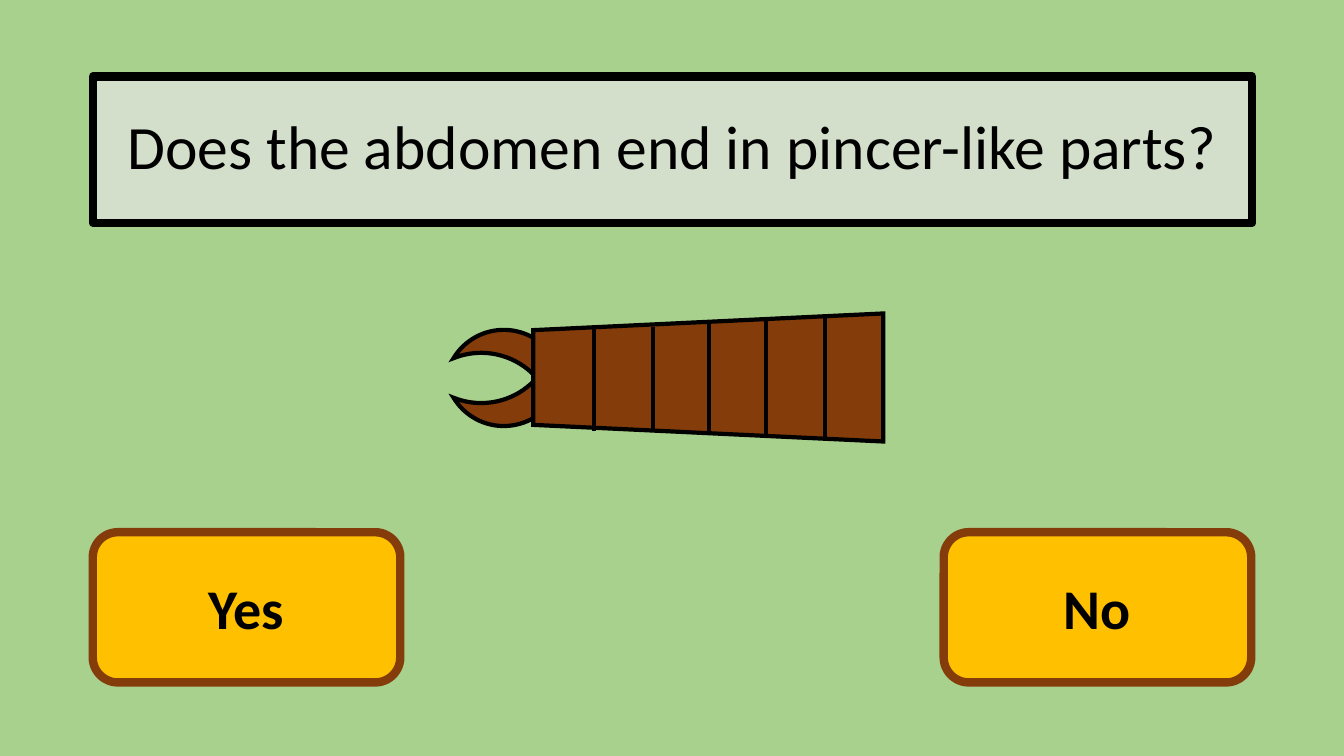
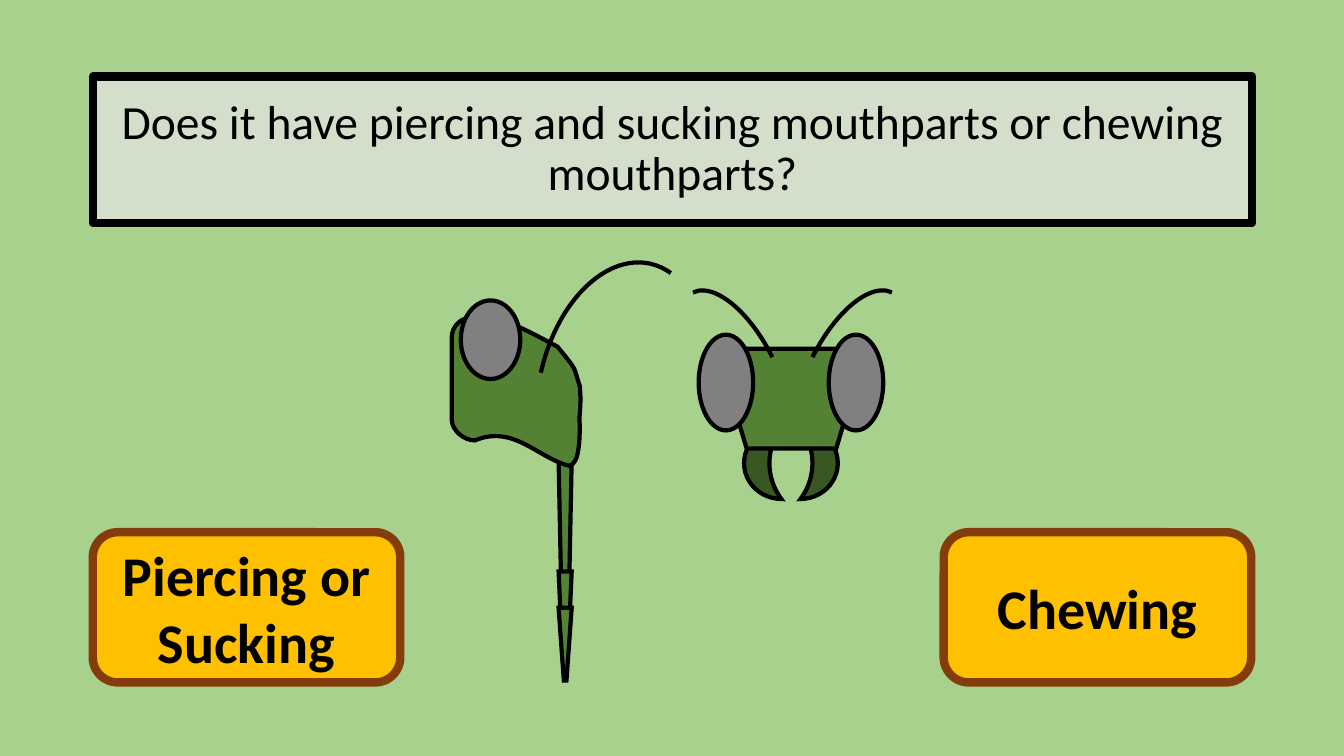
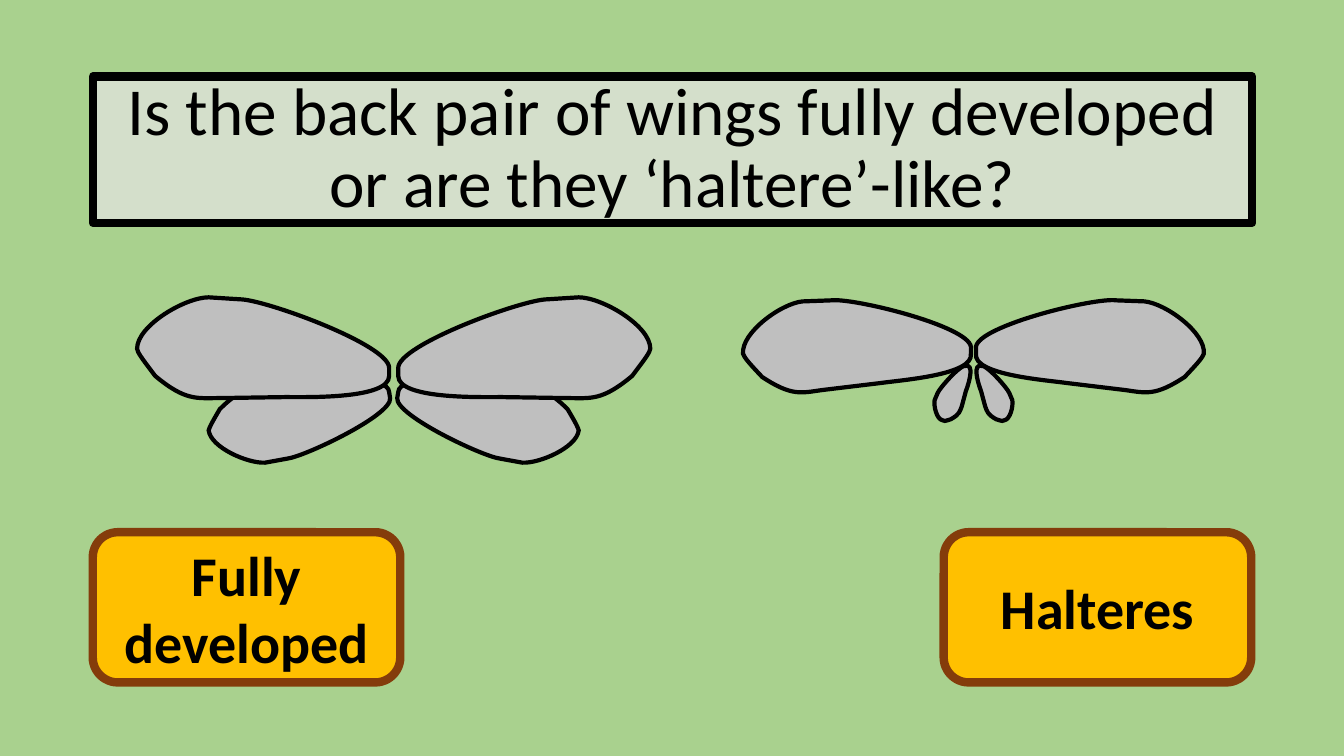
import math
from pptx import Presentation
from pptx import util as u
from pptx.dml.color import RGBColor
from pptx.enum import shapes, text
from pptx.oxml.ns import qn
from lxml import etree

I = u.Inches
S = shapes.MSO_SHAPE


class Theme:
    font = "Calibri"
    page, panel, black = "A9D18E", "E7E6E6", "000000"
    gold, brown = "FFC000", "843C0B"
    green, dark, eye, wing = "548235", "385723", "808080", "BFBFBF"
    frame, ink = 6, 3    # line widths
    label = 40           # button text


# ---- shared helpers ----
def sub(parent, tag, **attrs):
    return etree.SubElement(parent, qn(tag), attrs)


def stroke(shape, color, width):
    shape.line.color.rgb = RGBColor.from_string(color)
    shape.line.width = u.Pt(width)


def paint(shape, fill=None, line=Theme.black, width=Theme.ink, join="miter"):
    if fill:
        shape.fill.solid()
        shape.fill.fore_color.rgb = RGBColor.from_string(fill)
    else:
        shape.fill.background()
    stroke(shape, line, width)
    limit = {"lim": "800000"} if join == "miter" else {}
    sub(shape.line._get_or_add_ln(), "a:" + join, **limit)
    shape.shadow.inherit = False


def write(shape, words, size, bold=False, space=None):
    frame = shape.text_frame
    frame.word_wrap = True
    frame.auto_size = text.MSO_AUTO_SIZE.NONE
    frame.vertical_anchor = text.MSO_ANCHOR.MIDDLE
    para = frame.paragraphs[0]
    para.alignment = text.PP_ALIGN.CENTER
    para.line_spacing = space
    run = para.add_run()
    run.text = words
    run.font.name, run.font.size, run.font.bold = Theme.font, u.Pt(size), bold
    run.font.color.rgb = RGBColor.from_string(Theme.black)


def draw(canvas, kind, org, box, fill=None, turn=0, flip=None, adj=None, **look):
    """Add a preset shape; box is left, top, width, height from org."""
    x, y, w, h = box
    shape = canvas.shapes.add_shape(kind, I(org[0] + x), I(org[1] + y), I(w), I(h))
    shape.rotation = turn
    if flip:
        shape._element.spPr.xfrm.set("flip" + flip, "1")
    if adj is not None:
        shape.adjustments[0] = adj
    paint(shape, fill, **look)
    return shape


def rule(canvas, org, x, top, end):
    """Add an upright line."""
    x = I(org[0] + x)
    line = canvas.shapes.add_connector(
        shapes.MSO_CONNECTOR.STRAIGHT, x, I(org[1] + top), x, I(org[1] + end))
    stroke(line, Theme.black, Theme.ink)
    sub(line._element.spPr, "a:effectLst")


def spin(x, y, turn):
    a = math.radians(turn)
    return x * math.cos(a) - y * math.sin(a), x * math.sin(a) + y * math.cos(a)


def trace(canvas, org, segs, fill, side=1, turn=0):
    """Closed outline: pairs are corners, sixes are curves; side -1 mirrors.

    The points show the outline as it lies once turned."""
    turn *= side
    flat = [spin(side * x, y, -turn)
            for seg in segs for x, y in zip(seg[::2], seg[1::2])]
    # middle of the unturned box, and where it lies once turned
    mid = [(min(axis) + max(axis)) / 2 for axis in zip(*flat)]
    goal = spin(*mid, turn)
    dx, dy = (org[k] + goal[k] - mid[k] for k in (0, 1))
    pts = [(I(x + dx), I(y + dy)) for x, y in flat]
    pen = canvas.shapes.build_freeform(*pts[0], scale=1.0)
    pen.add_line_segments(pts[1:], close=True)
    shape = pen.convert_to_shape()
    shape.rotation = turn % 360
    # join three steps into each curve
    steps = iter(list(shape._element.iter(qn("a:lnTo"))))
    for seg in segs[1:]:
        first = next(steps)
        if len(seg) == 6:
            first.tag = qn("a:cubicBezTo")
            for step in (next(steps), next(steps)):
                first.append(step[0])
                step.getparent().remove(step)
    paint(shape, fill)


# ---- question slide: title panel and two answers ----
def ask(prs, words, size, answers):
    slide = prs.slides.add_slide(prs.slide_layouts[5])
    title = slide.shapes.title
    title.left, title.top, title.width, title.height = map(I, (0.92, 0.76, 11.5, 1.45))
    props = title._element.spPr
    sub(sub(props, "a:prstGeom", prst="roundRect"), "a:avLst")
    paint(title, Theme.panel, width=Theme.frame, join="round")
    sub(props.find(qn("a:solidFill"))[0], "a:alpha", val="70000")
    write(title, words, size, space=0.9)
    for left, answer in zip((0.92, 9.36), answers):
        button = draw(slide, S.ROUNDED_RECTANGLE, (left, 5.28), (0, 0, 3.05, 1.49),
                      Theme.gold, line=Theme.brown, width=Theme.frame)
        write(button, answer, Theme.label, bold=True)
    return slide


# ---- drawings, each one group ----
def abdomen(slide, org):
    group = slide.shapes.add_group_shape()
    # pincers
    for top, turn, flip in ((0.02, 120.9, None), (0.31, 239.1, "V")):
        draw(group, S.MOON, org, (0.36, top, 0.58, 1.17), Theme.brown, turn, flip)
    # body and its rings
    draw(group, S.TRAPEZOID, org, (1.89, -0.99, 1.27, 3.47), Theme.brown, 270, adj=0.13)
    for ring in ((2.53, 0.2, 1.3), (1.98, 0.24, 1.26), (1.39, 0.25, 1.28),
                 (3.1, 0.17, 1.32), (3.68, 0.13, 1.34)):
        rule(group, org, *ring)


HEAD = [(0.08, 0.45), (0.08, 0.34, 0.17, 0.25, 0.28, 0.25),
        (0.55, 0.25, 0.61, 0.26, 1.13, 0.54), (1.34, 0.8, 1.28, 0.72, 1.35, 0.93),
        (1.37, 1.15, 1.34, 1.18, 1.35, 1.32), (1.35, 1.43, 1.35, 1.72, 1.24, 1.72),
        (0.93, 1.64, 0.69, 1.31, 0.31, 1.47), (0.2, 1.47, 0.08, 1.37, 0.08, 1.26),
        (0.08, 0.45)]


def sucker(slide, org):
    group = slide.shapes.add_group_shape()
    # beak
    for top, high, adj in ((1.66, 1.61, 0.25), (2.77, 0.72, 0.25), (3.13, 0.72, 0.4)):
        draw(group, S.TRAPEZOID, org, (1.14, top, 0.13, high), Theme.green, 180, adj=adj)
    # head, eye and feeler
    trace(group, org, HEAD, Theme.green)
    draw(group, S.OVAL, org, (0.17, 0.08, 0.59, 0.78), Theme.eye)
    feeler = draw(group, S.ARC, org, (0.48, 0.15, 2.58, 1.65), turn=282.4)
    feeler.adjustments[1] = 6.05


def chewer(slide, org):
    group = slide.shapes.add_group_shape()
    # jaws and face
    for left, flip in ((0.48, None), (1.04, "H")):
        draw(group, S.MOON, org, (left, 0.94, 0.37, 0.71), Theme.dark, flip=flip, adj=0.68)
    draw(group, S.FLOWCHART_MANUAL_OPERATION, org, (0.21, 0.16, 1.48, 0.99), Theme.green)
    # eyes and feelers
    for left in (0.03, 1.32):
        draw(group, S.OVAL, org, (left, 0.02, 0.54, 0.95), Theme.eye)
    for left, turn, flip in ((0.61, 296.4, None), (-0.54, 63.6, "H")):
        draw(group, S.ARC, org, (left, 0.01, 1.85, 0.84), turn=turn, flip=flip)


# Right-hand wings, measured from the middle of the pair
HIND = [(0.04, 1.05), (0.02, 1.22, 0.89, 1.63, 1.06, 1.65), (1.28, 1.69),
        (1.45, 1.7, 1.82, 1.54, 1.84, 1.37), (1.83, 1.34, 1.83, 1.33, 1.73, 1.16),
        (1.53, 0.96, 1.45, 0.97, 1.28, 0.95), (0.81, 0.92),
        (0.64, 0.9, 0.06, 0.82, 0.05, 0.99), (0.04, 1.05)]
FORE = [(0.05, 0.75), (0.05, 0.52, 1.29, 0.07, 1.53, 0.07), (1.84, 0.05),
        (2.07, 0.05, 2.55, 0.33, 2.55, 0.56), (2.54, 0.6, 2.53, 0.62, 2.37, 0.83),
        (2.07, 1.08, 1.96, 1.05, 1.73, 1.05), (1.08, 1.04),
        (0.85, 1.04, 0.05, 1.06, 0.05, 0.83), (0.05, 0.75)]
SLIM = [(0.03, 0.54), (0.06, 0.33, 1.21, 0.05, 1.42, 0.08), (1.7, 0.09),
        (1.91, 0.11, 2.31, 0.4, 2.29, 0.61), (2.27, 0.65, 2.27, 0.66, 2.1, 0.84),
        (1.81, 1.03, 1.72, 1, 1.51, 0.97), (0.93, 0.9),
        (0.72, 0.87, 0, 0.82, 0.03, 0.61), (0.03, 0.54)]
CLUB = [(0.08, 0.73), (0.13, 0.71, 0.34, 0.95, 0.36, 1), (0.39, 1.07),
        (0.4, 1.13, 0.37, 1.26, 0.31, 1.27), (0.3, 1.28, 0.29, 1.28, 0.23, 1.26),
        (0.14, 1.21, 0.14, 1.18, 0.12, 1.13), (0.08, 0.98),
        (0.06, 0.93, 0, 0.75, 0.06, 0.73), (0.08, 0.73)]


def wings(slide, org, *pairs):
    """Mirrored wings; each pair is an outline and its turn."""
    group = slide.shapes.add_group_shape()
    for side, gap in ((-1, 0.01), (1, 0)):
        for segs, turn in pairs:
            trace(group, (org[0] + gap, org[1]), segs, Theme.wing, side, turn)


def main():
    prs = Presentation()
    prs.slide_width, prs.slide_height = I(13.33), I(7.5)
    back = prs.slide_master.background.fill
    back.solid()
    back.fore_color.rgb = RGBColor.from_string(Theme.page)

    slide = ask(prs, "Does the abdomen end in pincer-like parts?", 44, ("Yes", "No"))
    abdomen(slide, (4.5, 3))

    slide = ask(prs, "Does it have piercing and sucking mouthparts or chewing mouthparts?",
                34, ("Piercing or Sucking", "Chewing"))
    sucker(slide, (4.4, 2.9))
    chewer(slide, (6.9, 3.3))

    slide = ask(prs, "Is the back pair of wings fully developed or are they ‘haltere’-like?",
                48, ("Fully developed", "Halteres"))
    wings(slide, (3.9, 2.9), (HIND, 5.8), (FORE, 0))
    wings(slide, (9.65, 2.9), (SLIM, 6.2), (CLUB, 71.8))

    prs.save("out.pptx")


if __name__ == "__main__":
    main()
